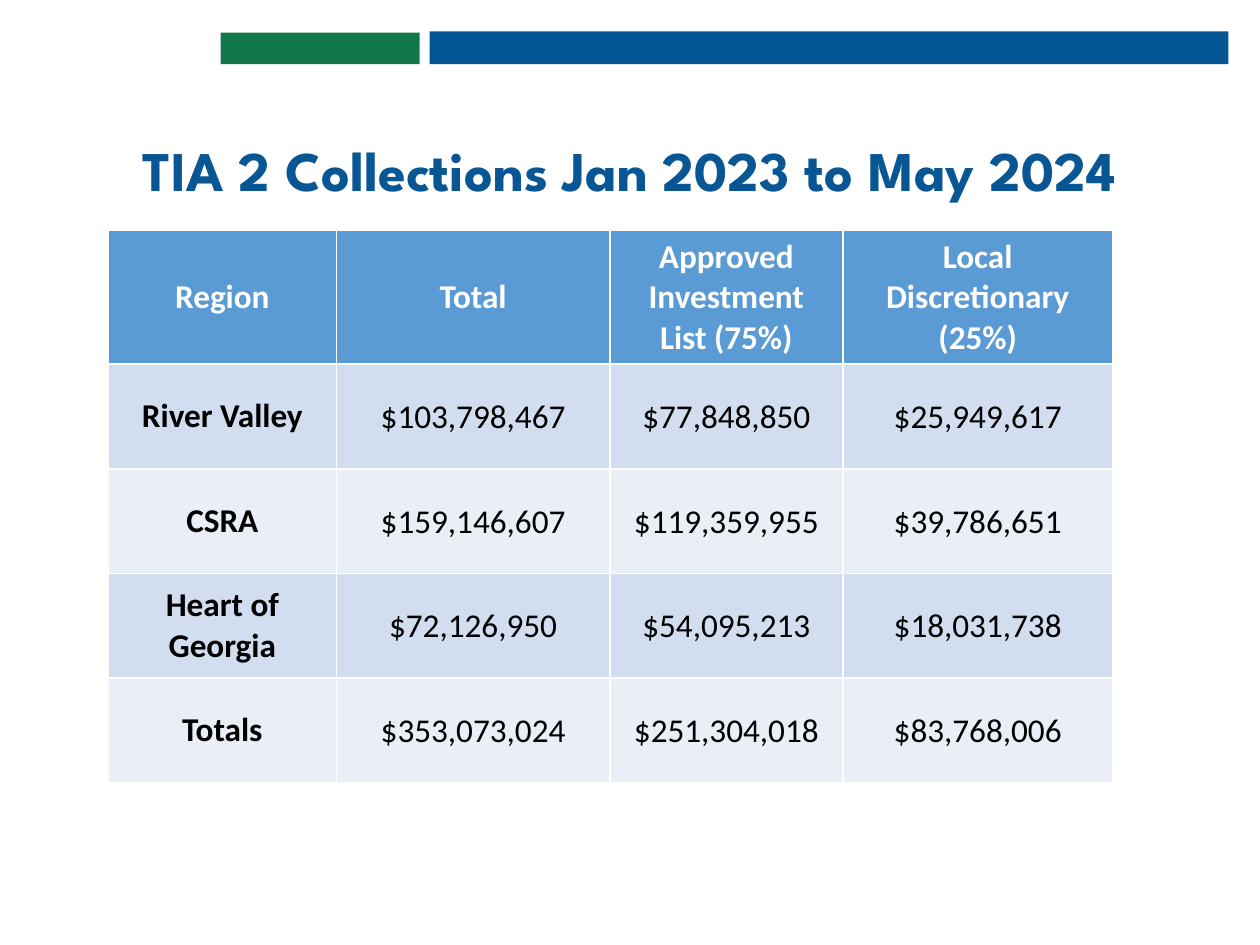
from pptx import Presentation
from pptx.dml.color import RGBColor
from pptx.enum.shapes import MSO_SHAPE
from pptx.enum.text import MSO_ANCHOR, MSO_AUTO_SIZE, PP_ALIGN
from pptx.util import Inches, Pt

BLUE, GREEN, TITLE_BLUE = "035594", "12784B", "085694"
HEADER_FILL, BAND_FILLS = "5B9BD5", ("D2DEEF", "EAEFF7")
COLUMN_WIDTHS = (1.81, 2.17, 1.85, 2.14)
HEADER_HEIGHT, ROW_HEIGHT = 1.03, 0.83
COLLECTIONS = (
    ("Region", "Total", "Approved Investment List (75%)", "Local Discretionary (25%)"),
    ("River Valley", "$103,798,467", "$77,848,850", "$25,949,617"),
    ("CSRA", "$159,146,607", "$119,359,955", "$39,786,651"),
    ("Heart of Georgia", "$72,126,950", "$54,095,213", "$18,031,738"),
    ("Totals", "$353,073,024", "$251,304,018", "$83,768,006"),
)


def rgb(value):
    """Turn a hex string into a colour."""
    return RGBColor.from_string(value)


def style_text(tf, font, size, color, bold):
    """Centre the first paragraph and format its runs."""
    p = tf.paragraphs[0]
    p.alignment = PP_ALIGN.CENTER
    for r in p.runs:
        r.font.name, r.font.size, r.font.bold = font, Pt(size), bold
        r.font.color.rgb = rgb(color)
    return p


def add_bar(slide, box, color):
    """Draw one plain band of the header strip in its box."""
    sp = slide.shapes.add_shape(MSO_SHAPE.RECTANGLE, *map(Inches, box))
    sp.shadow.inherit = False
    sp.fill.solid()
    sp.fill.fore_color.rgb = rgb(color)
    sp.line.fill.background()


def add_title(slide, box, text):
    """Place the title placeholder in its box and fill it."""
    title = slide.shapes.title
    title.left, title.top, title.width, title.height = map(Inches, box)
    tf = title.text_frame
    tf.text = text
    tf.word_wrap = True
    tf.auto_size = MSO_AUTO_SIZE.NONE
    tf.vertical_anchor = MSO_ANCHOR.BOTTOM
    style_text(tf, "League Spartan", 32, TITLE_BLUE, True).line_spacing = 0.9


def fill_cell(cell, text, row, column):
    """Write one cell, styled by its row and column."""
    header, label = row == 0, column == 0
    cell.text = text
    cell.vertical_anchor = MSO_ANCHOR.MIDDLE
    cell.fill.solid()
    cell.fill.fore_color.rgb = rgb(HEADER_FILL if header else BAND_FILLS[(row - 1) % 2])
    if not header and not label:
        cell.margin_left = cell.margin_right = cell.margin_top = Inches(0.01)
        cell.margin_bottom = 0
    style_text(cell.text_frame, "Calibri", 19, "FFFFFF" if header else "000000", header or label)


def add_collections_table(slide, left, top):
    """Build the collections table from its top-left corner."""
    heights = [HEADER_HEIGHT] + [ROW_HEIGHT] * (len(COLLECTIONS) - 1)
    box = (left, top, sum(COLUMN_WIDTHS), sum(heights))
    table = slide.shapes.add_table(len(heights), len(COLUMN_WIDTHS), *map(Inches, box)).table
    for column, width in zip(table.columns, COLUMN_WIDTHS):
        column.width = Inches(width)
    for i, (height, values) in enumerate(zip(heights, COLLECTIONS)):
        table.rows[i].height = Inches(height)
        for j, text in enumerate(values):
            fill_cell(table.cell(i, j), text, i, j)


def main():
    """Build and save the slide."""
    prs = Presentation()
    prs.slide_width, prs.slide_height = Inches(10), Inches(7.5)
    slide = prs.slides.add_slide(prs.slide_layouts[0])
    subtitle = slide.placeholders[1].element
    subtitle.getparent().remove(subtitle)
    add_bar(slide, (3.41, 0.25, 6.34, 0.26), BLUE)
    add_bar(slide, (1.75, 0.26, 1.58, 0.25), GREEN)
    add_title(slide, (0, 1.04, 10, 0.63), "TIA 2 Collections Jan 2023 to May 2024")
    add_collections_table(slide, 0.86, 1.83)
    prs.save("out.pptx")


if __name__ == "__main__":
    main()
